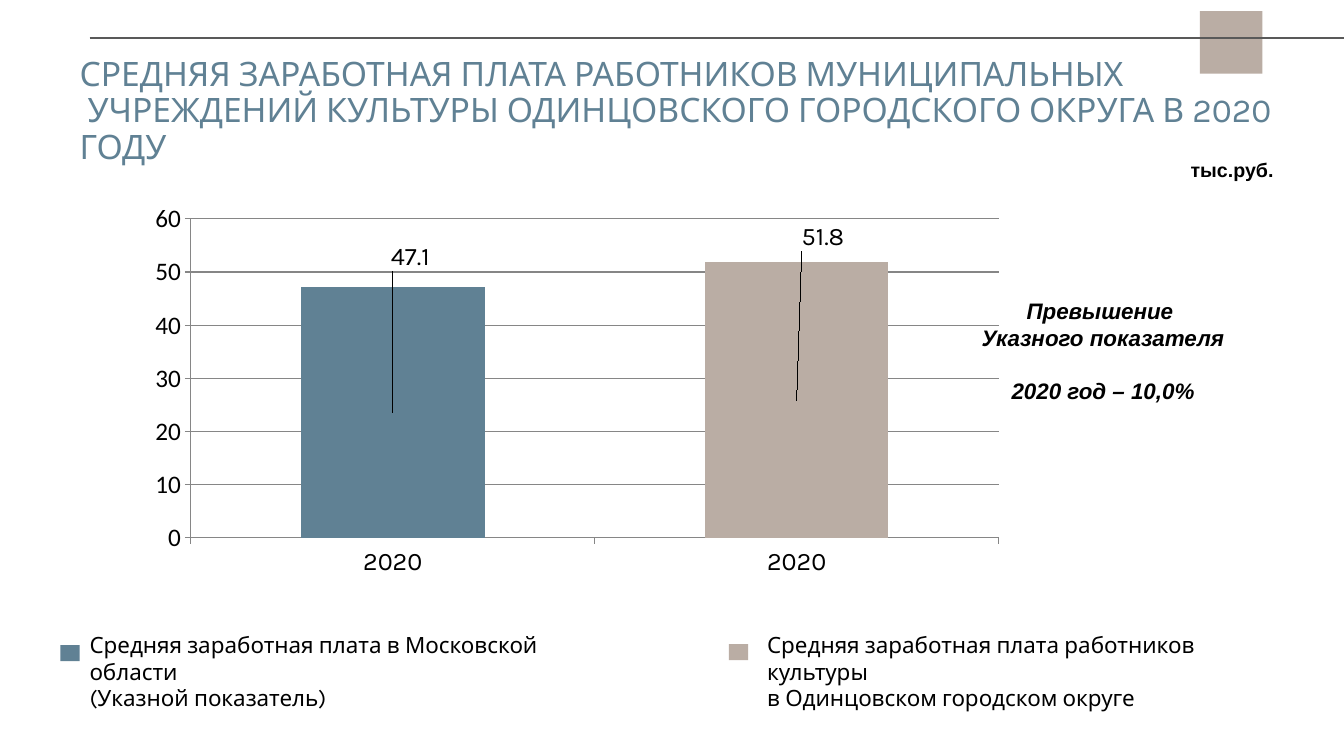
"""Slide comparing average pay of culture workers with the regional target, 2020."""
import copy

import pptx
import pptx.chart.data
import pptx.dml.color
import pptx.enum.chart
import pptx.enum.shapes
import pptx.enum.text
import pptx.oxml
import pptx.oxml.ns
import pptx.util

RGB = pptx.dml.color.RGBColor
Inches, Pt = pptx.util.Inches, pptx.util.Pt
qn = pptx.oxml.ns.qn
ALIGN = pptx.enum.text.PP_ALIGN
ANCHOR = pptx.enum.text.MSO_ANCHOR

BLUE = RGB(0x60, 0x81, 0x94)
BEIGE = RGB(0xBA, 0xAD, 0xA4)
SERIES = RGB(0x44, 0x72, 0xC4)
BLACK = RGB(0, 0, 0)
RULE = RGB(0x59, 0x59, 0x59)
GRID = RGB(0x86, 0x86, 0x86)
WIDTH, HEIGHT = 13.33, 7.5

TITLE = ("СРЕДНЯЯ ЗАРАБОТНАЯ ПЛАТА РАБОТНИКОВ МУНИЦИПАЛЬНЫХ\v"
         " УЧРЕЖДЕНИЙ КУЛЬТУРЫ ОДИНЦОВСКОГО ГОРОДСКОГО ОКРУГА В 2020 ГОДУ")
UNIT = ["тыс.руб."]
EXCESS = ["Превышение ", "Указного показателя", "2020 год – 10,0%"]
BARS = [
    {"year": "2020", "pay": 47.1, "color": BLUE, "label_shift": (0.02, -0.4)},
    {"year": "2020", "pay": 51.8, "color": BEIGE, "label_shift": (0.03, -0.42)},
]
LEGEND = [
    {"lines": ["Средняя заработная плата в Московской области", "(Указной показатель)"],
     "color": BLUE, "marker": (0.6, 6.4), "text": (0.79, 6.21, 4.66, 0.64)},
    {"lines": ["Средняя заработная плата работников культуры",
               "в Одинцовском городском округе"],
     "color": BEIGE, "marker": (7.23, 6.39), "text": (7.51, 6.21, 4.49, 0.64)},
]
PLOT_AREA = {"x": 0.06, "y": 0.06, "w": 0.92, "h": 0.82}


def place(*lengths):
    """Turn inches into slide lengths."""
    return [Inches(length) for length in lengths]


def write(frame, lines, size, font="Karla", color=BLACK, bold=False, italic=False,
          align=ALIGN.LEFT, spacing=None, wrap=True, anchor=ANCHOR.TOP):
    """Fill a text frame with one paragraph per line, in one format."""
    frame.word_wrap = wrap
    frame.auto_size = pptx.enum.text.MSO_AUTO_SIZE.NONE
    frame.vertical_anchor = anchor
    for index, line in enumerate(lines):
        paragraph = frame.add_paragraph() if index else frame.paragraphs[0]
        paragraph.text = line
        paragraph.alignment = align
        paragraph.line_spacing = spacing
        for run in paragraph.runs:
            run.font.size, run.font.name = Pt(size), font
            run.font.bold, run.font.italic = bold, italic
            run.font.color.rgb = color
        for line_break in paragraph._p.findall(qn("a:br")):
            line_break.append(copy.deepcopy(paragraph.runs[0]._r.rPr))
    return frame


def add_block(slide, color, *box):
    """Add a plain filled rectangle."""
    block = slide.shapes.add_shape(pptx.enum.shapes.MSO_SHAPE.RECTANGLE, *place(*box))
    block.shadow.inherit = False
    block.fill.solid()
    block.fill.fore_color.rgb = color
    block.line.fill.background()


def manual_layout(inner=False, **shares):
    """Build a chart layout element from shares of the chart's size."""
    layout = pptx.oxml.parse_xml(
        '<c:layout xmlns:c="http://schemas.openxmlformats.org/drawingml/2006/chart">'
        "<c:manualLayout/></c:layout>")
    entries = [("layoutTarget", "inner"), ("xMode", "edge"), ("yMode", "edge")] if inner else []
    for tag, value in entries + list(shares.items()):
        entry = layout[0].makeelement(qn("c:" + tag), {"val": str(value)})
        layout[0].append(entry)
    return layout


def style_font(font, name):
    """Set the chart's text format."""
    font.name, font.size = name, Pt(18)
    font.color.rgb = BLACK


def add_pay_chart(slide):
    """Add the column chart of average pay."""
    pay = pptx.chart.data.CategoryChartData()
    pay.categories = [bar["year"] for bar in BARS]
    pay.add_series("Series 1", [bar["pay"] for bar in BARS])
    chart = slide.shapes.add_chart(pptx.enum.chart.XL_CHART_TYPE.COLUMN_STACKED,
                                   *place(1.37, 1.94, 8.71, 3.86), pay).chart
    chart.has_legend = chart.has_title = False
    style_font(chart.font, "Calibri")
    for axis, name in ((chart.category_axis, "Karla"), (chart.value_axis, "Calibri")):
        style_font(axis.tick_labels.font, name)
        axis.major_tick_mark = pptx.enum.chart.XL_TICK_MARK.OUTSIDE
        axis.format.line.color.rgb = GRID
    amounts = chart.value_axis
    amounts.minimum_scale, amounts.maximum_scale, amounts.major_unit = 0, 60, 10
    amounts.major_gridlines.format.line.color.rgb = GRID

    plot = chart.plots[0]
    plot.gap_width, plot.overlap, plot.vary_by_categories = 120, 100, False
    columns = plot.series[0]
    columns.format.fill.solid()
    columns.format.fill.fore_color.rgb = SERIES
    columns.data_labels.show_value = True
    style_font(columns.data_labels.font, "Karla")
    for index, bar in enumerate(BARS):
        point = columns.points[index]
        point.format.fill.solid()
        point.format.fill.fore_color.rgb = bar["color"]
        style_font(point.data_label.font, "Karla")
        point.data_label.position = pptx.enum.chart.XL_LABEL_POSITION.CENTER
        x, y = bar["label_shift"]
        label = columns.data_labels._element.findall(qn("c:dLbl"))[index]
        label.insert(1, manual_layout(x=x, y=y))

    area = chart._chartSpace.find(".//" + qn("c:plotArea"))
    for layout in area.findall(qn("c:layout")):
        area.remove(layout)
    area.insert(0, manual_layout(inner=True, **PLOT_AREA))


def main():
    """Build and save the slide."""
    deck = pptx.Presentation()
    deck.slide_width, deck.slide_height = place(WIDTH, HEIGHT)
    slide = deck.slides.add_slide(deck.slide_layouts[5])

    title = slide.shapes.title
    title.left, title.top, title.width, title.height = place(0.69, 0.7, 12.21, 0.82)
    write(title.text_frame, [TITLE], 24, color=BLUE, spacing=0.9, anchor=ANCHOR.MIDDLE)

    add_pay_chart(slide)

    excess = slide.shapes.add_textbox(*place(9.13, 2.9, 3.62, 1.18))
    write(excess.text_frame, EXCESS, 16, font="Arial", bold=True, italic=True,
          align=ALIGN.CENTER).paragraphs[-1].space_before = Pt(19)
    unit = slide.shapes.add_textbox(*place(11.71, 1.52, 1.03, 0.34))
    write(unit.text_frame, UNIT, 14, font="Arial", bold=True, wrap=False)

    for entry in LEGEND:
        caption = slide.shapes.add_textbox(*place(*entry["text"]))
        write(caption.text_frame, entry["lines"], 16)
        add_block(slide, entry["color"], *entry["marker"], 0.19, 0.16)

    add_block(slide, BEIGE, 11.9, 0.11, 0.62, 0.62)
    rule = slide.shapes.add_connector(pptx.enum.shapes.MSO_CONNECTOR.STRAIGHT,
                                      *place(0.89, 0.38, WIDTH, 0.38))
    rule.line.color.rgb, rule.line.width = RULE, Pt(1.5)
    properties = rule._element.spPr
    properties.append(properties.makeelement(qn("a:effectLst"), {}))

    deck.save("out.pptx")


if __name__ == "__main__":
    main()
